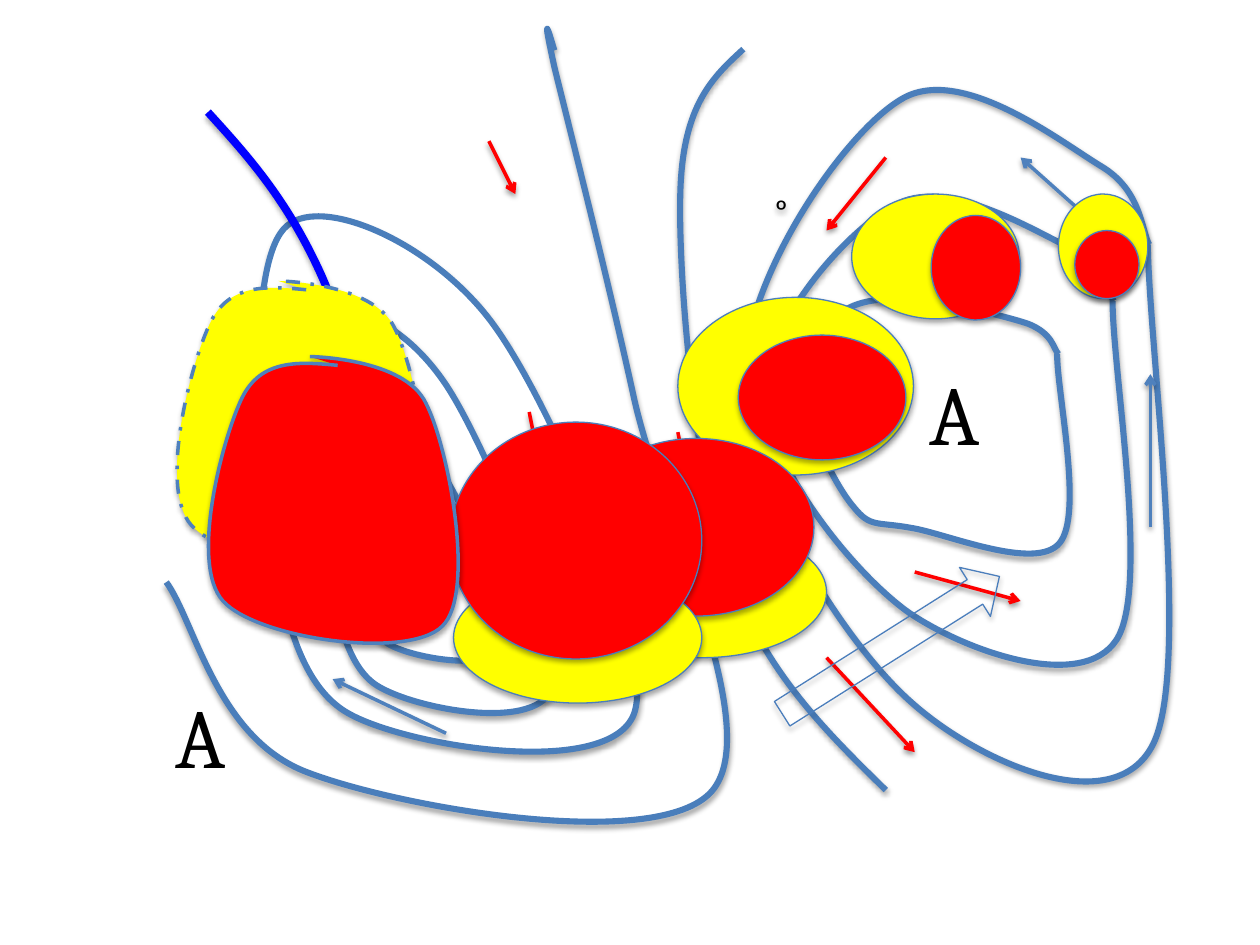
from dataclasses import dataclass

from pptx import Presentation
from pptx.dml.color import RGBColor
from pptx.enum.dml import MSO_LINE
from pptx.enum.shapes import MSO_CONNECTOR, MSO_SHAPE
from pptx.enum.text import MSO_ANCHOR, PP_ALIGN
from pptx.oxml import parse_xml
from pptx.oxml.ns import nsdecls, qn
from pptx.oxml.xmlchemy import OxmlElement
from pptx.util import Inches, Pt


@dataclass(frozen=True)
class Theme:
    black: str = "000000"
    white: str = "FFFFFF"
    red: str = "FF0000"
    yellow: str = "FFFF00"
    contour: str = "4A7EBB"
    rim: str = "4B7EBC"
    accent: str = "4F81BD"
    front: str = "0000FF"
    contour_width: float = 3.5
    front_width: float = 4.5
    arrow_width: float = 2
    rim_width: float = 0.75
    letter_font: str = "Cambria"
    mark_font: str = "Calibri"
    letter_size: int = 48
    mark_size: int = 18


THEME = Theme()

# Each curve is a start point, then two handles and an end point per bend, in inches.
OUTER_LEFT = [(2.12, 4.1), (2.04, 3.46), (1.97, 2.04), (2.28, 1.79), (2.58, 1.54), (3.49, 1.96),
              (3.94, 2.61), (4.4, 3.26), (5.22, 5.16), (5.03, 5.67), (4.83, 6.18), (3.26, 5.93),
              (2.78, 5.67), (2.29, 5.41), (2.22, 4.58), (2.12, 4.1)]
OUTER_RIGHT = [(9.12, 1.94), (9.06, 1.83), (9.06, 1.51), (8.74, 1.32), (8.41, 1.12), (7.62, 0.5),
               (7.15, 0.79), (6.68, 1.07), (5.89, 2.24), (5.9, 3.04), (5.91, 3.84), (6.69, 5.1),
               (7.24, 5.58), (7.78, 6.06), (8.84, 6.52), (9.15, 5.91), (9.46, 5.3), (9.12, 2.76),
               (9.11, 1.94)]
MIDDLE_RIGHT = [(8.84, 2.39), (8.78, 2.32), (8.79, 2.1), (8.5, 1.97), (8.22, 1.84), (7.55, 1.42),
                (7.14, 1.61), (6.73, 1.8), (6.05, 2.59), (6.07, 3.13), (6.08, 3.67), (6.75, 4.53),
                (7.21, 4.86), (7.68, 5.18), (8.59, 5.49), (8.86, 5.08), (9.13, 4.67), (8.83, 2.95),
                (8.83, 2.39)]
INNER_RIGHT = [(8.4, 2.81), (8.36, 2.77), (8.36, 2.65), (8.16, 2.57), (7.95, 2.5), (7.44, 2.38),
               (7.18, 2.37), (6.92, 2.37), (6.74, 2.4), (6.61, 2.54), (6.48, 2.68), (6.38, 2.98),
               (6.41, 3.22), (6.44, 3.47), (6.64, 3.87), (6.78, 4.03), (6.91, 4.19), (6.96, 4.14),
               (7.23, 4.19), (7.5, 4.23), (8.22, 4.54), (8.41, 4.31), (8.6, 4.08), (8.39, 3.12),
               (8.39, 2.81)]
OPEN_RIGHT = [(5.9, 0.39), (5.66, 0.61), (5.42, 0.83), (5.4, 1.52), (5.38, 2.2), (5.51, 3.72),
              (5.78, 4.52), (6.05, 5.31), (6.54, 5.79), (7.03, 6.27)]
OPEN_LEFT = [(4.4, 0.4), (4.35, 0.23), (4.3, 0.07), (4.4, 0.53), (4.51, 0.98), (4.82, 2.19),
             (5.03, 3.15), (5.24, 4.11), (6.08, 5.78), (5.65, 6.28), (5.22, 6.77), (3.17, 6.41),
             (2.44, 6.13), (1.72, 5.86), (1.55, 4.94), (1.32, 4.62)]
MIDDLE_LEFT = [(2.58, 4.25), (2.53, 3.77), (2.53, 2.76), (2.7, 2.57), (2.87, 2.39), (3.32, 2.67),
               (3.6, 3.15), (3.88, 3.62), (4.5, 5.05), (4.39, 5.44), (4.29, 5.82), (3.29, 5.63),
               (2.99, 5.44), (2.68, 5.24), (2.64, 4.61), (2.58, 4.25)]
INNER_LEFT = [(2.81, 4.39), (2.78, 4.1), (2.78, 3.49), (2.89, 3.38), (3, 3.27), (3.3, 3.44),
              (3.49, 3.72), (3.68, 4.01), (4.09, 4.88), (4.02, 5.11), (3.95, 5.34), (3.28, 5.23),
              (3.08, 5.11), (2.88, 4.99), (2.85, 4.61), (2.81, 4.39)]
FRONT = [(1.65, 0.89), (1.95, 1.22), (2.26, 1.56), (2.53, 2.14), (2.8, 2.72), (3.11, 3.95),
         (3.28, 4.39), (3.45, 4.83), (3.49, 4.72), (3.54, 4.77)]
CELL = [(2.43, 2.3), (2.12, 2.27), (1.82, 2.25), (1.67, 2.56), (1.52, 2.87), (1.25, 3.87),
        (1.52, 4.17), (1.79, 4.47), (2.99, 4.64), (3.26, 4.37), (3.53, 4.11), (3.31, 2.95),
        (3.13, 2.6), (2.96, 2.24), (2.21, 2.23), (2.21, 2.23)]
CELL_OFFSET = (0.25, 0.6)

LETTERS = [(7.26, 2.82, 0.63, 0.89), (1.28, 5.39, 0.63, 0.89)]
WARM_ARROWS = [((4.2, 3.27), (4.38, 4.18)), ((7.03, 1.25), (6.56, 1.83)),
               ((5.38, 3.43), (5.65, 4.77)), ((3.88, 1.12), (4.09, 1.54)),
               ((7.26, 4.54), (8.1, 4.77)), ((6.56, 5.22), (7.26, 5.97))]
COOL_ARROWS = [((8.75, 1.83), (8.1, 1.25)), ((9.13, 4.18), (9.13, 2.97)),
               ((3.54, 5.82), (2.64, 5.39))]
# Yellow ellipse, then the red one on top of it
NUCLEI = [((8.4, 1.54, 0.71, 0.83), (8.53, 1.83, 0.51, 0.54)),
          ((6.76, 1.54, 1.33, 0.99), (7.39, 1.71, 0.71, 0.83)),
          ((5.38, 2.36, 1.87, 1.41), (5.86, 2.66, 1.33, 0.99)),
          ((4.59, 4.18, 1.97, 1.04), (4.59, 3.48, 1.87, 1.41)),
          ((3.6, 4.54, 1.97, 1.04), (3.57, 3.35, 2, 1.88))]
BIG_ARROW = (6.05, 4.89, 2.04, 0.46)


def style(shape, fill=None, line=THEME.contour, width=THEME.contour_width, dash=None):
    if fill:
        shape.fill.solid()
        shape.fill.fore_color.rgb = RGBColor.from_string(fill)
    else:
        shape.fill.background()
    stroke(shape, line, width)
    if dash:
        shape.line.dash_style = dash
    add_shadow(shape)


def stroke(shape, color, width):
    shape.line.color.rgb = RGBColor.from_string(color)
    shape.line.width = Pt(width)


def add_shadow(shape, opacity=35):
    shape._element.spPr.append(parse_xml(
        f'<a:effectLst {nsdecls("a")}><a:outerShdw blurRad="{Pt(3)}" dist="{Pt(1.8)}" '
        f'dir="5400000" rotWithShape="0"><a:srgbClr val="{THEME.black}">'
        f'<a:alpha val="{opacity * 1000}"/></a:srgbClr></a:outerShdw></a:effectLst>'))


def add_curve(shapes, points, closed=False, **look):
    """Build a freeform through all points, then turn each three segments into one Bezier bend."""
    (start_x, start_y), *rest = [(round(x * 100), round(y * 100)) for x, y in points]
    builder = shapes.build_freeform(start_x, start_y, scale=Inches(0.01))
    builder.add_line_segments(rest, close=closed)
    shape = builder.convert_to_shape()
    segments = list(shape._element.iter(qn("a:lnTo")))
    for first in range(0, len(segments), 3):
        bend = OxmlElement("a:cubicBezTo")
        segments[first].addprevious(bend)
        for segment in segments[first:first + 3]:
            bend.append(segment[0])
            segment.getparent().remove(segment)
    style(shape, **look)
    return shape


def add_arrow(shapes, start, end, color):
    arrow = shapes.add_connector(MSO_CONNECTOR.STRAIGHT, *map(Inches, start + end))
    stroke(arrow, color, THEME.arrow_width)
    head = OxmlElement("a:tailEnd")
    head.set("type", "arrow")
    arrow._element.spPr.find(qn("a:ln")).append(head)
    add_shadow(arrow, opacity=38)


def add_preset(shapes, kind, box, fill=None):
    shape = shapes.add_shape(kind, *map(Inches, box))
    style(shape, fill, THEME.rim, THEME.rim_width)
    return shape


def write(shape, text, font, size, align, anchor, inset):
    frame = shape.text_frame
    frame.word_wrap = True
    frame.vertical_anchor = anchor
    frame.margin_left = frame.margin_right = frame.margin_top = frame.margin_bottom = Inches(inset)
    para = frame.paragraphs[0]
    para.alignment = align
    span = para.add_run()
    span.text = text
    span.font.name, span.font.size = font, Pt(size)
    span.font.color.rgb = RGBColor.from_string(THEME.black)


def main():
    deck = Presentation()
    deck.slide_width, deck.slide_height = Inches(10), Inches(7.5)
    page = deck.slides.add_slide(deck.slide_layouts[6])

    field = page.shapes.add_group_shape().shapes
    add_curve(field, OUTER_LEFT, closed=True, fill=THEME.white)
    add_curve(field, OUTER_RIGHT)
    marked = add_curve(field, MIDDLE_RIGHT)
    write(marked, "º", THEME.mark_font, THEME.mark_size, PP_ALIGN.LEFT, MSO_ANCHOR.TOP, 0.1)
    for points in (INNER_RIGHT, OPEN_RIGHT, OPEN_LEFT):
        add_curve(field, points)
    for points in (MIDDLE_LEFT, INNER_LEFT):
        add_curve(field, points, closed=True, fill=THEME.white)
    add_curve(field, FRONT, line=THEME.front, width=THEME.front_width)
    for box in LETTERS:
        letter = field.add_textbox(*map(Inches, box))
        write(letter, "A", THEME.letter_font, THEME.letter_size,
              PP_ALIGN.CENTER, MSO_ANCHOR.MIDDLE, 0)
    for arrows, color in ((WARM_ARROWS, THEME.red), (COOL_ARROWS, THEME.accent)):
        for start, end in arrows:
            add_arrow(field, start, end, color)

    for boxes in NUCLEI:
        nucleus = page.shapes.add_group_shape().shapes
        for box, fill in zip(boxes, (THEME.yellow, THEME.red)):
            add_preset(nucleus, MSO_SHAPE.OVAL, box, fill)

    cell = page.shapes.add_group_shape().shapes
    look = dict(line=THEME.accent, width=THEME.arrow_width)
    add_curve(cell, CELL, fill=THEME.yellow, dash=MSO_LINE.DASH_DOT, **look)
    shift_x, shift_y = CELL_OFFSET
    add_curve(cell, [(x + shift_x, y + shift_y) for x, y in CELL], fill=THEME.red, **look)

    add_preset(page.shapes, MSO_SHAPE.RIGHT_ARROW, BIG_ARROW).rotation = 327.7
    deck.save("out.pptx")


if __name__ == "__main__":
    main()
